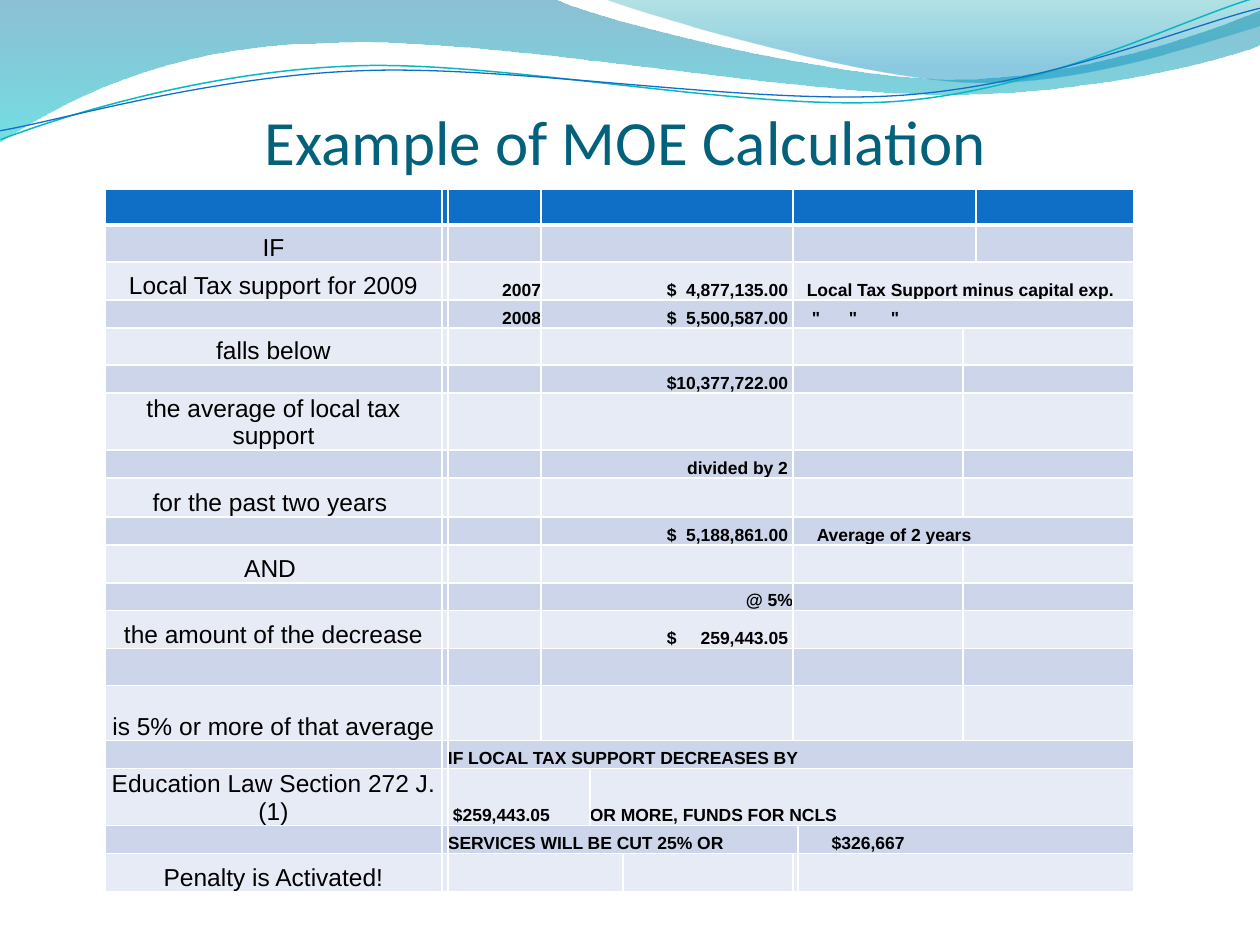
from lxml import etree
from pptx import Presentation
from pptx import util as u
from pptx.dml.color import RGBColor
from pptx.enum import text
from pptx.oxml import ns

SCALE = 914400 / 126
WHITE = RGBColor(0xFF, 0xFF, 0xFF)
BLACK = RGBColor(0, 0, 0)
NAVY = RGBColor(0x04, 0x61, 0x7B)
BLUE = RGBColor(0x0F, 0x6F, 0xC6)
TEAL = RGBColor(0x0A, 0xB8, 0xBF)
DEEP = RGBColor(0x00, 0x74, 0xA1)
AQUA = RGBColor(0x00, 0xC6, 0xCF)
SEA = RGBColor(0x00, 0xA1, 0xA9)
SKY = RGBColor(0x00, 0x8B, 0xBF)
DARK = RGBColor(0xCC, 0xD5, 0xEA)
PALE = RGBColor(0xE7, 0xEB, 0xF5)

LEFT, MID, RIGHT = text.PP_ALIGN.LEFT, text.PP_ALIGN.CENTER, text.PP_ALIGN.RIGHT

BAND = [(0, 0), (554, -1), (600, 21, 837, 79, 955, 79),
        (1075, 79, 1207, 33, 1260, 11), (1261, 45),
        (1239, 55, 1096, 96, 940, 94), (784, 94, 481, 35, 324, 43),
        (163, 45, 58, 105, -1, 142), (0, 0)]
CREST = [(604, -1), (641, 14, 859, 78, 969, 82),
         (1079, 87, 1211, 40, 1260, 26), (1260, 0), (604, -1)]
UPPER = [(-2, 110), (59, 90, 200, 52, 350, 53),
         (499, 53, 745, 118, 896, 114), (1048, 109, 1184, 45, 1260, 27)]
LOWER = [(-2, 101), (57, 94, 207, 57, 357, 58),
         (509, 58, 750, 112, 902, 108), (1052, 104, 1189, 52, 1262, 38)]

COLS = [337, 6, 93, 49, 33, 170, 5, 165, 13, 158]
HEAD = (1, 1, 1, 3, 3, 1)
WIDE = (1, 1, 1, 3, 4)
SPLIT = (1, 1, 1, 3, 2, 2)


def label(words):
    return dict(words=words, align=MID, size=14, bold=False)


def note(words, left=0, tabs=()):
    return dict(words=words, left=left, tabs=tabs)


def value(words, right=5):
    return dict(words=words, align=RIGHT, right=right)


def money(words):
    return dict(words="$\t" + words, left=126, tabs=[(121, "r")])


ROWS = [
    (36, HEAD, {}),
    (37, HEAD, {0: label("IF")}),
    (38, WIDE, {0: label("Local Tax support for 2009"), 2: value("2007", 0),
                3: money("4,877,135.00"),
                4: note("Local Tax Support minus capital exp.", 14)}),
    (28, WIDE, {2: value("2008", 0), 3: money("5,500,587.00"),
                4: note('"\t"\t"', 19, [(37, "l"), (79, "l")])}),
    (37, SPLIT, {0: label("falls below")}),
    (28, SPLIT, {3: value("$10,377,722.00")}),
    (57, SPLIT, {0: label("the average of local tax support")}),
    (28, SPLIT, {3: value("divided by 2")}),
    (39, SPLIT, {0: label("for the past two years ")}),
    (28, WIDE, {3: money("5,188,861.00"), 4: note("Average of 2 years", 24)}),
    (38, SPLIT, {0: label("AND ")}),
    (28, SPLIT, {3: value("@ 5%", 0)}),
    (38, SPLIT, {0: label("the amount of the decrease"),
                 3: money("259,443.05")}),
    (37, SPLIT, {}),
    (55, SPLIT, {0: label("is 5% or more of that average")}),
    (28, (1, 1, 8), {2: note("IF LOCAL TAX SUPPORT DECREASES BY")}),
    (57, (1, 1, 2, 6), {0: label("Education Law Section 272 J.(1)"),
                        2: note("$259,443.05", 5),
                        3: note("OR MORE, FUNDS FOR NCLS")}),
    (28, (1, 1, 5, 3), {2: note("SERVICES WILL BE CUT 25% OR"),
                        3: note("$326,667", 34)}),
    (38, (1, 1, 3, 1, 1, 3), {0: label("Penalty is Activated!")}),
]


def px(num):
    return u.Emu(round(num * SCALE))


class Deck:
    face = "Arial"
    title_face = "Calibri"

    def __init__(self):
        self.file = Presentation()
        self.file.slide_width, self.file.slide_height = px(1260), px(945)
        self.slide = self.file.slides.add_slide(self.file.slide_layouts[5])

    def curve(self, parts, close):
        ends = [(px(part[-2]), px(part[-1])) for part in parts]
        pen = self.slide.shapes.build_freeform(*ends[0])
        pen.add_line_segments(ends[1:], close=close)
        form = pen.convert_to_shape()
        form.shadow.inherit = False
        legs = list(form._element.spPr.iter(ns.qn("a:lnTo")))
        for leg, part in zip(legs, parts[1:]):
            if len(part) == 6:
                bend = etree.Element(ns.qn("a:cubicBezTo"))
                for x, y in zip(part[::2], part[1::2]):
                    etree.SubElement(bend, ns.qn("a:pt"), x=str(px(x) - form.left),
                                     y=str(px(y) - form.top))
                leg.getparent().replace(leg, bend)
        return form

    def wave(self, parts, stops):
        form = self.curve(parts, True)
        form.line.fill.background()
        form.fill.gradient()
        form.fill.gradient_angle = 270
        for stop, (pos, color, alpha) in zip(form.fill.gradient_stops, stops):
            stop.position = pos
            stop.color.rgb = color
        tints = form._element.spPr.iter(ns.qn("a:srgbClr"))
        for tint, (pos, color, alpha) in zip(tints, stops):
            etree.SubElement(tint, ns.qn("a:alpha"), val=str(alpha * 1000))

    def line(self, parts, color, width):
        form = self.curve(parts, False)
        form.rotation = 357.3
        form.fill.background()
        form.line.color.rgb = color
        form.line.width = u.Pt(width)

    def title(self, words, x, y, w, h):
        box = self.slide.shapes.title
        self.slide.shapes._spTree.append(box._element)
        box.left, box.top, box.width, box.height = map(px, (x, y, w, h))
        frame = box.text_frame
        frame.text = words
        frame.vertical_anchor = text.MSO_ANCHOR.BOTTOM
        frame.margin_left = frame.margin_right = frame.margin_bottom = 0
        frame.margin_top = px(6)
        para = frame.paragraphs[0]
        para.alignment = MID
        self.font(para, self.title_face, 36, False, NAVY)

    def font(self, para, face, size, bold, color):
        font = para.font
        font.name, font.size, font.bold = face, u.Pt(size), bold
        font.color.rgb = color

    def border(self, cell, row):
        wide = {"T": 3 if row == 1 else 1, "B": 3 if row == 0 else 1}
        props = cell._tc.get_or_add_tcPr()
        for i, side in enumerate("LRTB"):
            edge = etree.Element(ns.qn("a:ln" + side), w=str(u.Pt(wide.get(side, 1))))
            fill = etree.SubElement(edge, ns.qn("a:solidFill"))
            etree.SubElement(fill, ns.qn("a:srgbClr"), val=str(WHITE))
            props.insert(i, edge)

    def cell(self, cell, fill, words="", align=LEFT, size=10, bold=True,
             left=0, right=0, tabs=()):
        cell.fill.solid()
        cell.fill.fore_color.rgb = fill
        cell.margin_left, cell.margin_right = px(left), px(right)
        cell.margin_top = cell.margin_bottom = 0
        cell.vertical_anchor = text.MSO_ANCHOR.BOTTOM
        cell.text = words
        para = cell.text_frame.paragraphs[0]
        para.alignment = align
        if tabs:
            stops = etree.SubElement(para._p.get_or_add_pPr(), ns.qn("a:tabLst"))
            for pos, side in tabs:
                etree.SubElement(stops, ns.qn("a:tab"), pos=str(px(pos)), algn=side)
        self.font(para, self.face, size, bold, BLACK)

    def table(self, x, y, cols, rows):
        high = sum(row[0] for row in rows)
        grid = self.slide.shapes.add_table(
            len(rows), len(cols), px(x), px(y), px(sum(cols)), px(high)).table
        for col, wide in zip(grid.columns, cols):
            col.width = px(wide)
        for r, (tall, spans, items) in enumerate(rows):
            grid.rows[r].height = px(tall)
            fill = BLUE if r == 0 else DARK if r % 2 else PALE
            for c in range(len(cols)):
                self.cell(grid.cell(r, c), fill)
                self.border(grid.cell(r, c), r)
            c = 0
            for i, span in enumerate(spans):
                cell = grid.cell(r, c)
                if span > 1:
                    cell.merge(grid.cell(r, c + span - 1))
                self.cell(cell, fill, **items.get(i, {}))
                c += span


def main():
    deck = Deck()
    deck.wave(BAND, [(0, DEEP, 45), (1, AQUA, 55)])
    deck.wave(CREST, [(0, SEA, 30), (0.8, SKY, 45)])
    deck.line(UPPER, TEAL, 0.85)
    deck.line(LOWER, BLUE, 0.75)
    deck.title("Example of MOE Calculation", 95, 94, 1061, 84)
    deck.table(105, 189, COLS, ROWS)
    deck.file.save("out.pptx")


if __name__ == "__main__":
    main()
